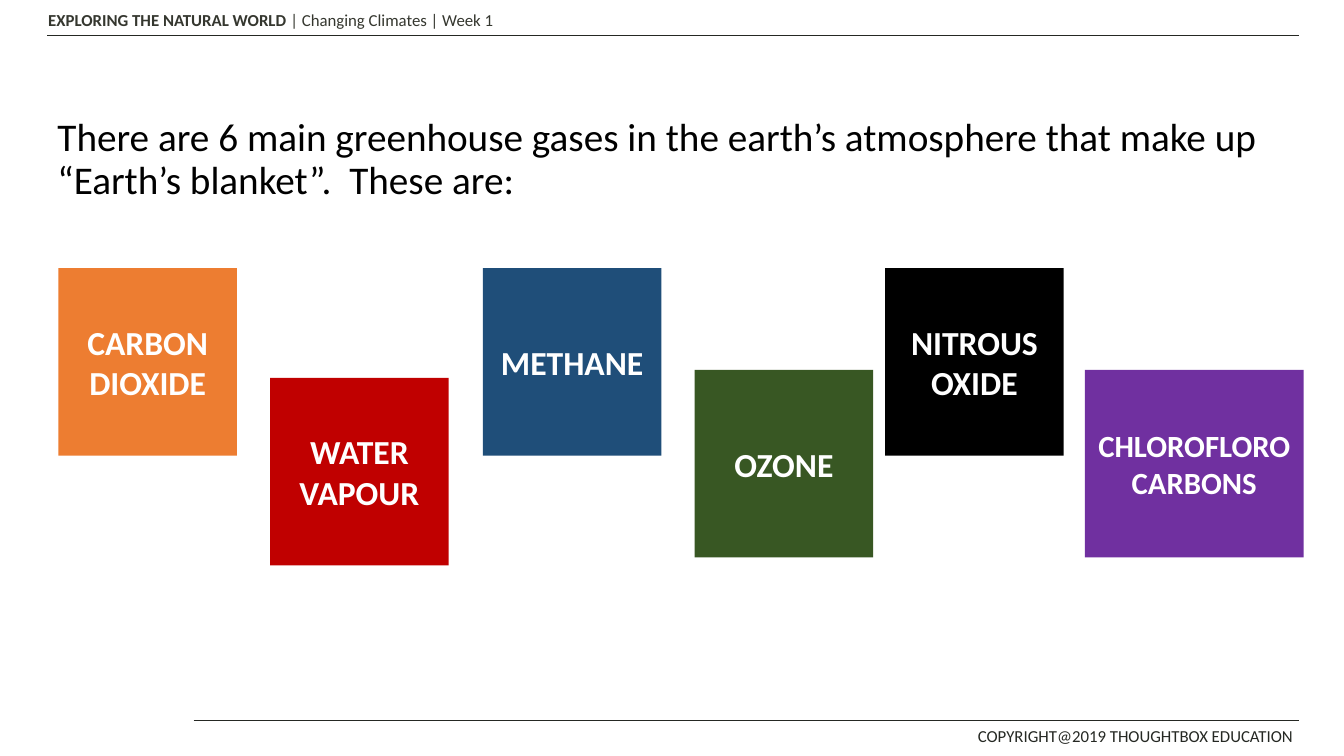
from lxml.etree import SubElement
from pptx import Presentation
from pptx.dml.color import RGBColor
from pptx.enum.shapes import MSO_CONNECTOR, MSO_SHAPE
from pptx.enum.text import MSO_ANCHOR, PP_ALIGN
from pptx.oxml.ns import qn
from pptx.util import Inches, Pt

FONT = "Calibri"
RULE_COLOR = RGBColor(0x25, 0x28, 0x23)
HEADER_COLOR = RGBColor(0x35, 0x37, 0x2F)
BLACK = RGBColor(0x00, 0x00, 0x00)
WHITE = RGBColor(0xFF, 0xFF, 0xFF)
ORANGE = RGBColor(0xED, 0x7D, 0x31)
RED = RGBColor(0xC0, 0x00, 0x00)
BLUE = RGBColor(0x1F, 0x4E, 0x79)
GREEN = RGBColor(0x38, 0x57, 0x23)
PURPLE = RGBColor(0x70, 0x30, 0xA0)

TILE_HEIGHT = 1.86
# Name, colour, left, top, width, text size
GASES = [
    ("CARBON DIOXIDE", ORANGE, 0.58, 2.66, 1.77, 24),
    ("WATER VAPOUR", RED, 2.68, 3.75, 1.77, 24),
    ("METHANE", BLUE, 4.79, 2.66, 1.77, 24),
    ("OZONE", GREEN, 6.89, 3.67, 1.77, 24),
    ("NITROUS OXIDE", BLACK, 8.78, 2.66, 1.77, 24),
    ("CHLOROFLOROCARBONS", PURPLE, 10.76, 3.67, 2.17, 22),
]


def set_font(paragraph, size, color, bold=None):
    font = paragraph.font
    font.name = FONT
    font.size = Pt(size)
    font.color.rgb = color
    font.bold = bold


def add_rule(slide, left, right, top):
    """Add a thin horizontal line."""
    connector = slide.shapes.add_connector(
        MSO_CONNECTOR.STRAIGHT, Inches(left), Inches(top), Inches(right), Inches(top))
    connector.line.color.rgb = RULE_COLOR
    connector.line.width = Pt(1)
    SubElement(connector._element.spPr, qn("a:effectLst"))


def add_label(slide, left, top, width, height, runs, color, wrap=True):
    """Add a one-line text box from (text, bold) runs."""
    box = slide.shapes.add_textbox(Inches(left), Inches(top), Inches(width), Inches(height))
    box.text_frame.word_wrap = wrap
    paragraph = box.text_frame.paragraphs[0]
    set_font(paragraph, 12, color)
    for text, bold in runs:
        run = paragraph.add_run()
        run.text = text
        run.font.bold = bold


def fill_body(slide, text):
    body = slide.placeholders[1]
    body.left, body.top = Inches(0.47), Inches(1.12)
    body.width, body.height = Inches(12.4), Inches(4.76)
    paragraph = body.text_frame.paragraphs[0]
    paragraph.text = text
    paragraph.line_spacing = 0.9
    paragraph.space_before = Pt(0)
    properties = paragraph._p.get_or_add_pPr()
    properties.set("marL", "0")
    properties.set("indent", "0")
    SubElement(properties, qn("a:buNone"))
    set_font(paragraph, 28, BLACK)


def add_gas_tile(slide, name, color, left, top, width, size):
    tile = slide.shapes.add_shape(
        MSO_SHAPE.RECTANGLE, Inches(left), Inches(top), Inches(width), Inches(TILE_HEIGHT))
    tile.shadow.inherit = False
    tile.fill.solid()
    tile.fill.fore_color.rgb = color
    tile.line.fill.background()
    frame = tile.text_frame
    frame.word_wrap = True
    frame.vertical_anchor = MSO_ANCHOR.MIDDLE
    paragraph = frame.paragraphs[0]
    paragraph.text = name
    paragraph.alignment = PP_ALIGN.CENTER
    set_font(paragraph, size, WHITE, bold=True)


def main():
    presentation = Presentation()
    presentation.slide_width = Inches(13.33)
    presentation.slide_height = Inches(7.5)
    slide = presentation.slides.add_slide(presentation.slide_layouts[1])
    title = slide.shapes.title._element
    title.getparent().remove(title)

    add_rule(slide, 0.47, 12.88, 0.35)
    add_label(slide, 0.38, 0.05, 4.77, 0.3,
              [("EXPLORING THE NATURAL WORLD ", True),
               ("| Changing Climates | Week 1", False)], HEADER_COLOR, wrap=False)
    add_rule(slide, 1.92, 12.88, 7.15)
    add_label(slide, 9.6, 7.15, 3.4, 0.31,
              [("COPYRIGHT@2019 THOUGHTBOX EDUCATION", False)], RULE_COLOR)
    fill_body(slide, "There are 6 main greenhouse gases in the earth’s atmosphere "
                     "that make up “Earth’s blanket”.  These are:")
    for gas in GASES:
        add_gas_tile(slide, *gas)

    presentation.save("out.pptx")


if __name__ == "__main__":
    main()
